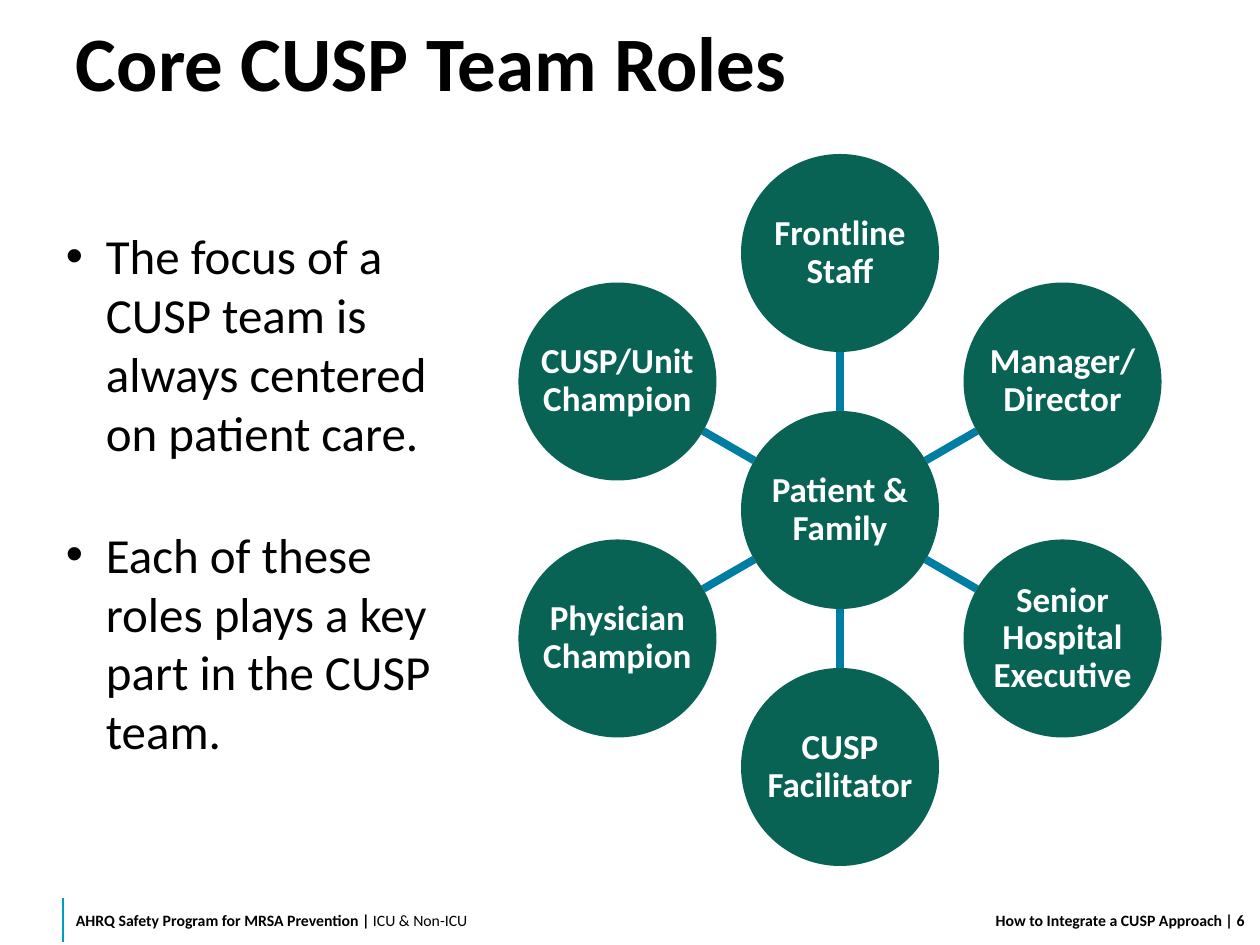
from math import cos, radians, sin

from lxml.etree import SubElement
from pptx import Presentation
from pptx.dml.color import RGBColor
from pptx.enum.shapes import MSO_CONNECTOR, MSO_SHAPE
from pptx.enum.text import MSO_ANCHOR, PP_ALIGN
from pptx.oxml.ns import qn
from pptx.util import Pt

PX = 914400 / 126  # EMU per px
FONT = "Calibri"
BLACK = RGBColor(0x00, 0x00, 0x00)
WHITE = RGBColor(0xFF, 0xFF, 0xFF)
GREEN = RGBColor(0x08, 0x63, 0x54)
BLUE = RGBColor(0x00, 0x7D, 0xA3)
CYAN = RGBColor(0x00, 0x9E, 0xC2)


def emu(*lengths):
    return [round(n * PX) for n in lengths]


class SlideBuilder:
    def __init__(self, prs):
        self.s = prs.slides.add_slide(prs.slide_layouts[6])

    def frame(self, sp, margins, anchor):
        tf = sp.text_frame
        tf.word_wrap = True
        tf.vertical_anchor = anchor
        (tf.margin_left, tf.margin_top,
         tf.margin_right, tf.margin_bottom) = emu(*margins)
        return tf

    def run(self, p, text, size, bold=False, color=BLACK):
        r = p.add_run()
        r.text = text
        r.font.name = FONT
        r.font.size = Pt(size)
        r.font.bold = bold
        r.font.color.rgb = color

    def text(self, box, runs, size, margins, align=PP_ALIGN.LEFT, spacing=1.0):
        sp = self.s.shapes.add_textbox(*emu(*box))
        p = self.frame(sp, margins, MSO_ANCHOR.MIDDLE).paragraphs[0]
        p.alignment = align
        p.line_spacing = spacing
        for text, bold in runs:
            self.run(p, text, size, bold)

    def bullets(self, box, items, size, indent, gap):
        sp = self.s.shapes.add_textbox(*emu(*box))
        tf = self.frame(sp, (13, 6, 13, 6), MSO_ANCHOR.TOP)
        for i, item in enumerate(items):
            p = tf.add_paragraph() if i else tf.paragraphs[0]
            pPr = p._p.get_or_add_pPr()
            left = emu(indent)[0]
            pPr.set("marL", str(left))
            pPr.set("indent", str(-left))
            SubElement(pPr, qn("a:buFont"), typeface="Arial")
            SubElement(pPr, qn("a:buChar"), char="•")
            p.space_before = Pt(gap if i else 0)
            self.run(p, item, size)

    def line(self, start, end, color, width):
        cx = self.s.shapes.add_connector(
            MSO_CONNECTOR.STRAIGHT, *emu(*start, *end))
        cx.line.color.rgb = color
        cx.line.width = Pt(width)
        SubElement(cx._element.spPr, qn("a:effectLst"))

    def circle(self, center, diameter, text):
        x, y = center
        sp = self.s.shapes.add_shape(MSO_SHAPE.OVAL, *emu(
            x - diameter / 2, y - diameter / 2, diameter, diameter))
        sp.shadow.inherit = False
        sp.fill.solid()
        sp.fill.fore_color.rgb = GREEN
        sp.line.fill.background()
        # Negative side margins let the words use the full width of the circle
        tf = self.frame(sp, (-12, 0, -12, 0), MSO_ANCHOR.MIDDLE)
        p = tf.paragraphs[0]
        p.alignment = PP_ALIGN.CENTER
        p.line_spacing = 0.9
        self.run(p, text, 20, True, WHITE)


def main():
    prs = Presentation()
    prs.slide_width, prs.slide_height = emu(1260, 945)
    slide = SlideBuilder(prs)

    # Title and bullets
    slide.text((63, 0, 1134, 126), [("Core CUSP Team Roles", True)], 44,
               (13, 13, 13, 6), spacing=0.9)
    slide.bullets((53, 220, 417, 658), [
        "The focus of a CUSP team is always centered on patient care.",
        "Each of these roles plays a key part in the CUSP team.",
    ], size=28, indent=40, gap=36)

    # Team wheel: roles clockwise from the top, around the patient
    roles = ["Frontline Staff", "Manager/ Director",
             "Senior Hospital Executive", "CUSP Facilitator",
             "Physician Champion", "CUSP/Unit Champion"]
    hub_x, hub_y = 840, 510
    ring, diameter = 257, 198

    def on_ring(i, distance):
        angle = radians(360 / len(roles) * i - 90)
        return hub_x + distance * cos(angle), hub_y + distance * sin(angle)

    for i in range(len(roles)):
        slide.line(on_ring(i, diameter / 2), on_ring(i, ring - diameter / 2),
                   BLUE, 4.5)
    slide.circle((hub_x, hub_y), diameter, "Patient & Family")
    for i, role in enumerate(roles):
        slide.circle(on_ring(i, ring), diameter, role)

    # Footer
    slide.line((63, 898), (63, 942), CYAN, 1)
    slide.text((63, 895, 517, 50),
               [("AHRQ Safety Program for MRSA Prevention | ", True),
                ("ICU & Non-ICU", False)], 9, (13, 0, 13, 0))
    slide.text((895, 895, 327, 50),
               [("How to Integrate a CUSP Approach", True)], 9,
               (13, 6, 0, 6), PP_ALIGN.RIGHT)
    slide.text((1222, 895, 38, 50), [(" | 6", True)], 9, (0, 6, 0, 6))

    prs.save("out.pptx")


if __name__ == "__main__":
    main()
